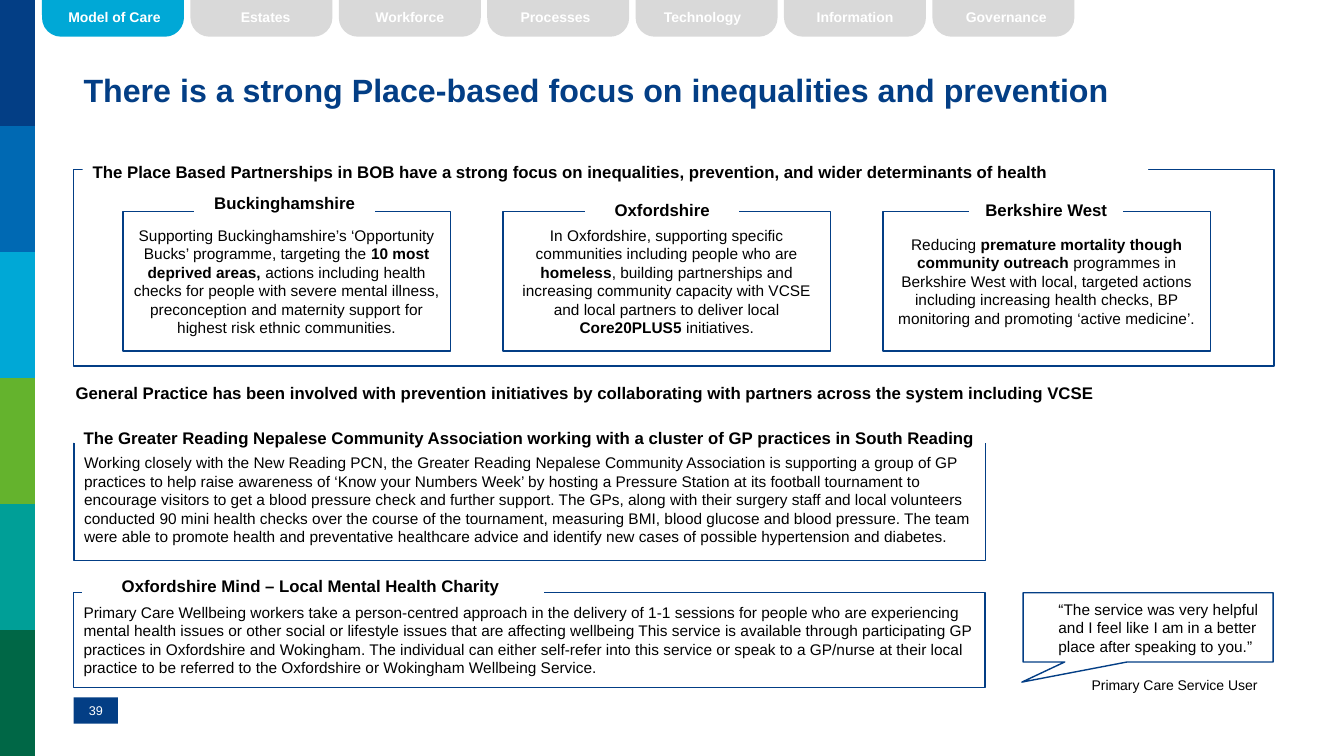
from pptx import Presentation
from pptx.dml.color import RGBColor
from pptx.enum.shapes import MSO_SHAPE
from pptx.enum.text import MSO_ANCHOR, PP_ALIGN
from pptx.util import Pt

RECT = MSO_SHAPE.RECTANGLE
TAB = MSO_SHAPE.ROUND_2_SAME_RECTANGLE
CALL = MSO_SHAPE.RECTANGULAR_CALLOUT
LEFT, MID = PP_ALIGN.LEFT, PP_ALIGN.CENTER
TOP, HALF = MSO_ANCHOR.TOP, MSO_ANCHOR.MIDDLE

HUES = {
    "navy": "033E85", "blue": "0069B3", "cyan": "00A8D6", "lime": "64B32D",
    "teal": "009F97", "pine": "006746", "grey": "D9D9D9", "white": "FFFFFF",
    "black": "000000",
}
BANDS = ["navy", "blue", "cyan", "lime", "teal", "pine"]
TABS = [("Model of Care", 1), ("Estates", 3), ("Workforce", 0), ("Processes", -2),
        ("Technology ", -1.5), ("Information", 0), ("Governance", 2)]
PLACES = [
    ("Buckinghamshire", -1.4, -14.4, 127.4, [
        "Supporting Buckinghamshire’s ‘Opportunity Bucks’ programme, targeting the ",
        "10 most deprived areas, ",
        "actions including health checks for people with severe mental illness, "
        "preconception and maternity support for highest risk ethnic communities."]),
    ("Oxfordshire", -3.2, -9.4, 108, [
        "In Oxfordshire, supporting specific communities including people who are ",
        "homeless",
        ", building partnerships and increasing community capacity with VCSE and "
        "local partners to deliver local ",
        "Core20PLUS5 ", "initiatives."]),
    ("Berkshire West", -0.3, -9.4, 108, [
        "Reducing ", "premature mortality though community outreach ",
        "programmes in Berkshire West with local, targeted actions including "
        "increasing health checks, BP monitoring and promoting ‘active medicine’."]),
]
READING = (
    "Working closely with the New Reading PCN, the Greater Reading Nepalese Community "
    "Association is supporting a group of GP practices to help raise awareness of ‘Know "
    "your Numbers Week’ by hosting a Pressure Station at its football tournament to "
    "encourage visitors to get a blood pressure check and further support. The GPs, along "
    "with their surgery staff and local volunteers conducted 90 mini health checks over "
    "the course of the tournament, measuring BMI, blood glucose and blood pressure. The "
    "team were able to promote health and preventative healthcare advice and identify new "
    "cases of possible hypertension and diabetes.")
MIND = (
    "Primary Care Wellbeing workers take a person-centred approach in the delivery of 1-1 "
    "sessions for people who are experiencing mental health issues or other social or "
    "lifestyle issues that are affecting wellbeing This service is available through "
    "participating GP practices in Oxfordshire and Wokingham. The individual can either "
    "self-refer into this service or speak to a GP/nurse at their local practice to be "
    "referred to the Oxfordshire or Wokingham Wellbeing Service.")


def tint(name):
    """Return the named colour."""
    return RGBColor.from_string(HUES[name])


def block(slide, box, fill="white", line=None, width=1, kind=RECT):
    """Add a flat shape, with an outline if a line colour is given."""
    shape = slide.shapes.add_shape(kind, *map(Pt, box))
    shape.shadow.inherit = False
    shape.fill.solid()
    shape.fill.fore_color.rgb = tint(fill)
    if line:
        shape.line.color.rgb = tint(line)
        shape.line.width = Pt(width)
    else:
        shape.line.fill.background()
    return shape


def write(shape, runs, size=11, hue="black", bold=False, align=LEFT, anchor=HALF, pad=7.2):
    """Fill a shape with runs whose weight alternates from the first."""
    frame = shape.text_frame
    frame.word_wrap = True
    frame.vertical_anchor = anchor
    frame.margin_left, frame.margin_right = Pt(pad), Pt(7.2)
    frame.margin_top = frame.margin_bottom = Pt(3.6)
    para = frame.paragraphs[0]
    para.alignment = align
    for i, text in enumerate(runs):
        run = para.add_run()
        run.text = text
        run.font.name = "Arial"
        run.font.size = Pt(size)
        run.font.bold = bold != (i % 2 == 1)
        run.font.color.rgb = tint(hue)


def label(slide, box, text, **style):
    """Add a text box of one run."""
    write(slide.shapes.add_textbox(*map(Pt, box)), [text], **style)


def head(slide, box, text, align=LEFT, width=2):
    """Add a bold heading on white that breaks the frame behind it."""
    write(block(slide, box, line="white", width=width), [text],
          size=12, bold=True, align=align)


def rail(slide, box):
    """Stack the colour bands down the side."""
    x, y, w, h = box
    step = h / len(BANDS)
    for i, hue in enumerate(BANDS):
        block(slide, (x, y + i * step, w, step), hue)


def menu(slide, box):
    """Lay the section tabs along the top edge, the first one lit."""
    x, y, w, h = box
    for i, (text, shift) in enumerate(TABS):
        left = x + i * 106
        hue = "grey" if i else "cyan"
        tab = block(slide, (left, y, w, h), hue, hue, 2, TAB)
        tab.adjustments[0] = 0.5
        tab.rotation = 180
        label(slide, (left + shift, y + 2.2, w, 19.4), text,
              size=10, hue="white", bold=True, align=MID)


def places(slide, box):
    """Frame the three place panels under a shared heading."""
    x, y, w, h = box
    block(slide, box, line="navy")
    lead = block(slide, (x + 6.5, y - 8.7, 761, 21.6))
    write(lead, ["The Place Based Partnerships in BOB have a strong focus on "
                 "inequalities, prevention, and wider determinants of health"],
          size=12, bold=True, anchor=TOP)
    wide = 234
    for i, (name, shift, rise, span, runs) in enumerate(PLACES):
        left, top = x + 35.2 + i * 271.45, y + 30.2
        write(block(slide, (left, top, wide, 99.4), line="navy"), runs, align=MID)
        start = left + (wide - span) / 2 + shift
        head(slide, (start, top + rise, span, 16.6), name, MID)


def case(slide, box, text, title, cap, align):
    """Frame a case study, with its heading offset from the top left."""
    x, y, w, h = box
    dx, dy, wide, high = cap
    write(block(slide, box, line="navy"), [text])
    head(slide, (x + dx, y + dy, wide, high), title, align)


def quote(slide, box):
    """Add the speech callout and the name of its speaker."""
    x, y, w, h = box
    shape = block(slide, box, line="navy", kind=CALL)
    shape.adjustments[0], shape.adjustments[1] = -0.505, 0.792
    write(shape, ["“The service was very helpful and I feel like I am in a better "
                  "place after speaking to you.”"], pad=25.2)
    label(slide, (x + 41.8, y + 56.2, 137.5, 19.4), "Primary Care Service User", size=10)


def main():
    """Build and save the slide."""
    deck = Presentation()
    deck.slide_width, deck.slide_height = Pt(960), Pt(540)
    slide = deck.slides.add_slide(deck.slide_layouts[6])
    rail(slide, (0, 0, 25, 540))
    menu(slide, (31, 0, 99.4, 25.2))
    label(slide, (52.6, 46.8, 856, 44), "There is a strong Place-based focus on "
          "inequalities and prevention", size=23, hue="navy", bold=True, anchor=TOP)
    places(slide, (52.6, 121, 857.5, 140.4))
    write(block(slide, (54, 273.6, 818.6, 14.4)),
          ["General Practice has been involved with prevention initiatives by "
           "collaborating with partners across the system including VCSE"],
          size=12, bold=True, pad=0)
    case(slide, (53, 313.2, 651, 87.1), READING,
         "The Greater Reading Nepalese Community Association working with a cluster "
         "of GP practices in South Reading", (-0.4, -3.6, 668.2, 5.8), LEFT)
    case(slide, (52.6, 423.4, 651, 67.5), MIND,
         "Oxfordshire Mind – Local Mental Health Charity ", (7.2, -12.3, 327.6, 14.4), MID)
    quote(slide, (730.8, 423.4, 178.6, 49.4))
    write(block(slide, (52.6, 498.2, 31.7, 18.7), "navy"), ["39"],
          size=9, hue="white", align=MID)
    deck.save("out.pptx")


if __name__ == "__main__":
    main()
